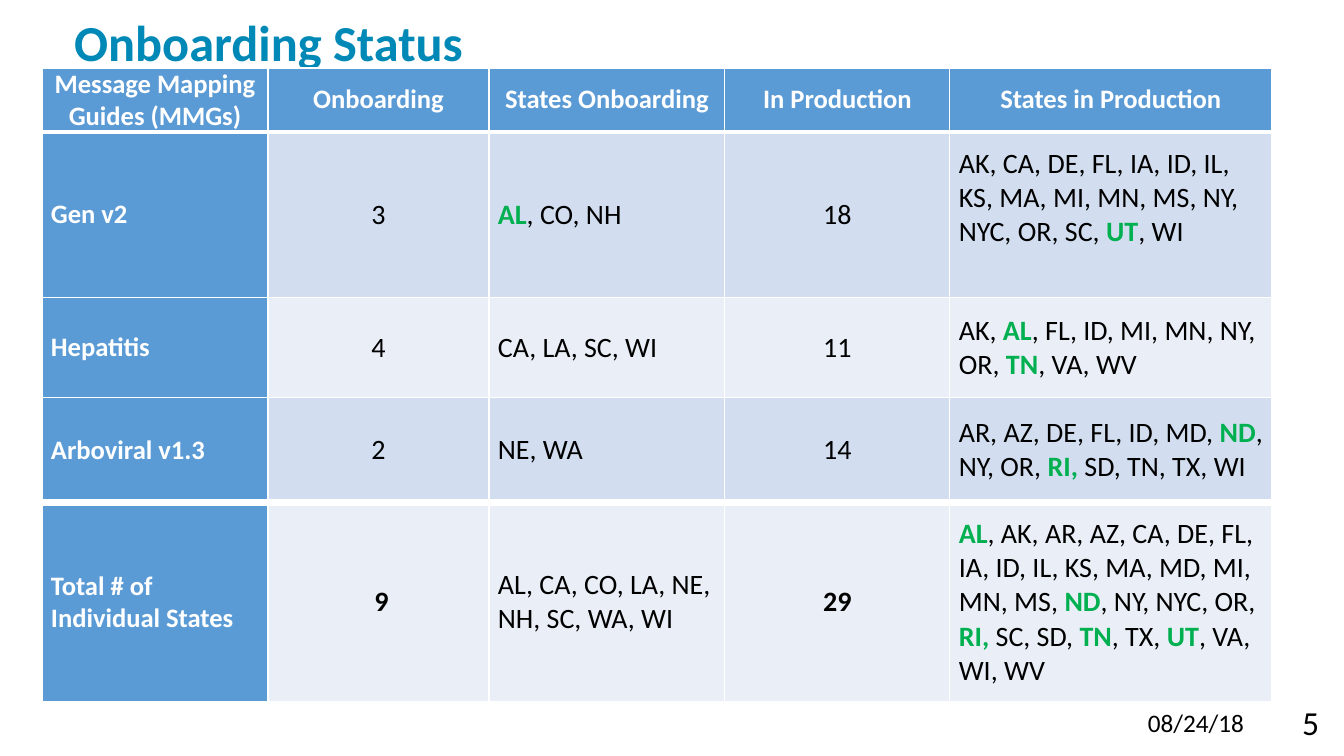
from dataclasses import dataclass

from lxml.etree import SubElement
from pptx import Presentation
from pptx.dml.color import RGBColor
from pptx.enum.text import MSO_ANCHOR, PP_ALIGN
from pptx.oxml.ns import qn
from pptx.util import Pt


@dataclass(frozen=True)
class Theme:
    font: str = "Calibri"
    title: str = "0088B7"
    header: str = "5B9BD5"
    bands: tuple = ("EAEFF7", "D2DEEF")
    white: str = "FFFFFF"
    ink: str = "000000"
    accent: str = "00B050"
    title_size: int = 36
    label_size: int = 19
    cell_size: int = 20
    date_size: int = 18
    number_size: int = 24


def px(length):
    return round(length * 914400 / 100.8)


class StatusPage:
    def __init__(self, deck, theme):
        self.theme = theme
        self.page = deck.slides.add_slide(deck.slide_layouts[5])

    def span(self, para, text, size, color, bold=False):
        run = para.add_run()
        run.text = text
        run.font.name = self.theme.font
        run.font.size = Pt(size)
        run.font.bold = bold
        run.font.color.rgb = RGBColor.from_string(color)

    def title(self, text, left, top, width, height):
        box = self.page.shapes.title
        box.left, box.top, box.width, box.height = map(px, (left, top, width, height))
        box.text_frame.word_wrap = True
        box.text_frame.vertical_anchor = MSO_ANCHOR.BOTTOM
        para = box.text_frame.paragraphs[0]
        para.alignment = PP_ALIGN.LEFT
        para.line_spacing = Pt(40)
        self.span(para, text, self.theme.title_size, self.theme.title, True)

    def label(self, text, left, top, width, height, size, align=PP_ALIGN.LEFT):
        box = self.page.shapes.add_textbox(*map(px, (left, top, width, height)))
        box.text_frame.word_wrap = True
        para = box.text_frame.paragraphs[0]
        para.alignment = align
        self.span(para, text, size, self.theme.ink)

    def borders(self, cell, top, bottom):
        properties = cell._tc.get_or_add_tcPr()
        for side, points in (("L", 1), ("R", 1), ("T", top), ("B", bottom)):
            line = SubElement(properties, qn(f"a:ln{side}"), w=str(Pt(points)))
            fill = SubElement(line, qn("a:solidFill"))
            SubElement(fill, qn("a:srgbClr"), val=self.theme.white)

    def cell(self, cell, text, fill, size, color, bold, align):
        """Fill one cell; text between asterisks is highlighted."""
        cell.fill.solid()
        cell.fill.fore_color.rgb = RGBColor.from_string(fill)
        cell.vertical_anchor = MSO_ANCHOR.MIDDLE
        cell.margin_left = cell.margin_right = px(9)
        cell.margin_top = cell.margin_bottom = 0
        para = cell.text_frame.paragraphs[0]
        para.alignment = align
        for index, part in enumerate(text.split("*")):
            marked = index % 2 == 1
            if part:
                self.span(para, part, size, self.theme.accent if marked else color,
                          bold or marked)

    def table(self, rows, left, top, widths, heights, edges):
        """Draw the grid; edges are the widths in points of its horizontal rules."""
        theme = self.theme
        frame = self.page.shapes.add_table(
            len(rows), len(widths), px(left), px(top), px(sum(widths)), px(sum(heights)))
        table = frame.table
        table.horz_banding = False
        for column, width in zip(table.columns, widths):
            column.width = px(width)
        for r, texts in enumerate(rows):
            table.rows[r].height = px(heights[r])
            for c, text in enumerate(texts):
                cell = table.cell(r, c)
                heading = r == 0 or c == 0
                count = c in (1, 3)
                total = count and r == len(rows) - 1
                self.borders(cell, edges[r], edges[r + 1])
                self.cell(
                    cell, text,
                    theme.header if heading else theme.bands[r % 2],
                    theme.label_size if heading else theme.cell_size,
                    theme.white if heading else theme.ink,
                    heading or total,
                    PP_ALIGN.CENTER if r == 0 or count else PP_ALIGN.LEFT)
        return table


ROWS = [
    ["Message Mapping Guides (MMGs)", "Onboarding", "States Onboarding",
     "In Production", "States in Production"],
    ["Gen v2", "3", "*AL*, CO, NH", "18",
     "AK, CA, DE, FL, IA, ID, IL, KS, MA, MI, MN, MS, NY, NYC, OR, SC, *UT*, WI"],
    ["Hepatitis", "4", "CA, LA, SC, WI", "11",
     "AK, *AL*, FL, ID, MI, MN, NY, OR, *TN*, VA, WV"],
    ["Arboviral v1.3", "2", "NE, WA", "14",
     "AR, AZ, DE, FL, ID, MD, *ND*, NY, OR, *RI,* SD, TN, TX, WI"],
    ["Total # of Individual States", " 9", "AL, CA, CO, LA, NE, NH, SC, WA, WI", "29",
     "*AL*, AK, AR, AZ, CA, DE, FL, IA, ID, IL, KS, MA, MD, MI, MN, MS, *ND*, NY, NYC, OR, "
     "*RI, *SC, SD, *TN*, TX, *UT*, VA, WI, WV"],
]


def main():
    deck = Presentation()
    deck.slide_width, deck.slide_height = px(1344), px(756)
    theme = Theme()
    status = StatusPage(deck, theme)
    status.label("5", 1202, 697, 127, 50, theme.number_size, PP_ALIGN.RIGHT)
    status.title("Onboarding Status", 64, 5, 1210, 72)
    table = status.table(ROWS, 42, 68, widths=(226, 221, 236, 225, 322),
                         heights=(63, 166, 100, 105, 199), edges=(1, 3, 1, 1, 6, 1))
    table.cell(1, 4).margin_bottom = px(34)
    status.label("08/24/18", 1138, 702, 123, 40, theme.date_size)
    deck.save("out.pptx")


if __name__ == "__main__":
    main()
